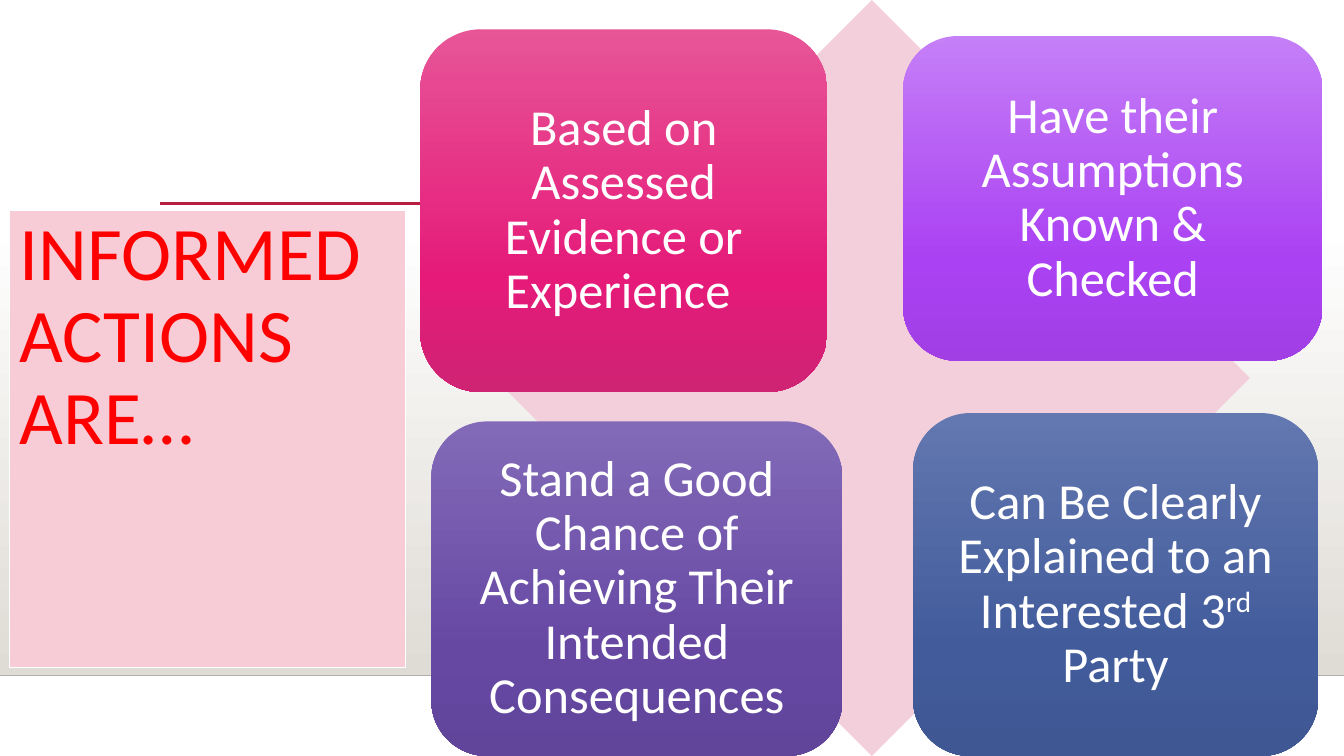
"""Build the slide on what informed actions are."""
from copy import deepcopy

from pptx import Presentation, util as u
from pptx.dml.color import RGBColor
from pptx.enum import shapes, text
from pptx.oxml import ns
from pptx.oxml.xmlchemy import OxmlElement


def paint(color_format, value):
    color_format.rgb = RGBColor.from_string(value)


def add_block(kind, box, colors, content=(), style=None):
    shape = slide.shapes.add_shape(kind, *map(u.Cm, box))
    shape.shadow.inherit = False
    shape.line.fill.background()
    if len(colors) == 1:
        shape.fill.solid()
        paint(shape.fill.fore_color, colors[0])
    else:
        shape.fill.gradient()
        shape.fill.gradient_angle = 270
        stop_list = shape._element.spPr.find(".//" + ns.qn("a:gsLst"))
        for extra in range(len(colors) - 2):
            stop_list.append(deepcopy(stop_list[0]))
        positions = (0, 0.69, 1) if len(colors) == 3 else (0, 1)
        for stop, position, color in zip(shape.fill.gradient_stops, positions, colors):
            stop.position = position
            paint(stop.color, color)
    if content:
        for name, value in style["frame"].items():
            setattr(shape.text_frame, name, value)
        paragraph = shape.text_frame.paragraphs[0]
        paragraph.alignment = style["alignment"]
        paragraph.line_spacing = 0.9
        for words, baseline in content:
            run = paragraph.add_run()
            run.text = words
            run.font.name = "Calibri"
            run.font.size = u.Pt(style["size"])
            paint(run.font.color, style["color"])
            if baseline:
                run.font._element.set("baseline", str(baseline))
    return shape


presentation = Presentation()
presentation.slide_width = u.Cm(33.87)
presentation.slide_height = u.Cm(19.05)
slide = presentation.slides.add_slide(presentation.slide_layouts[6])
shape_kind = shapes.MSO_SHAPE

add_block(shape_kind.RECTANGLE, (0, 5.61, 33.87, 11.41), ("FFFFFF", "DFDBD5"))

for left, right, top, color, width in (
    (0, 33.87, 17.02, "B2AFAA", 1),
    (4.04, 30.73, 5.13, "B71E42", 2.5),
):
    rule = slide.shapes.add_connector(
        shapes.MSO_CONNECTOR.STRAIGHT, u.Cm(left), u.Cm(top), u.Cm(right), u.Cm(top)
    )
    rule._element.spPr.append(OxmlElement("a:effectLst"))
    paint(rule.line.color, color)
    rule.line.width = u.Pt(width)

title_style = {
    "frame": {"word_wrap": True, "vertical_anchor": text.MSO_ANCHOR.TOP},
    "alignment": text.PP_ALIGN.LEFT,
    "size": 54,
    "color": "FF0000",
}
title = add_block(
    shape_kind.RECTANGLE, (0.25, 5.31, 9.98, 11.51), ("F7CCD6",),
    [("INFORMED ACTIONS ARE…", 0)], title_style,
)
paint(title.line.color, "FFFFFF")
title.line.width = u.Pt(0.75)

add_block(shape_kind.DIAMOND, (12.45, 0, 19.05, 19.05), ("F2CFDB",))

tile_frame = {"word_wrap": True, "vertical_anchor": text.MSO_ANCHOR.MIDDLE}
for side in ("left", "right", "top", "bottom"):
    tile_frame["margin_" + side] = u.Cm(0.38)
tile_style = {
    "frame": tile_frame,
    "alignment": text.PP_ALIGN.CENTER,
    "size": 36,
    "color": "FFFFFF",
}
tiles = (
    ((10.59, 0.74, 10.26, 9.14), ("E75597", "E51A79", "CF2374"),
     [("Based on Assessed Evidence or Experience ", 0)]),
    ((22.76, 0.91, 10.57, 8.18), ("C57FF7", "AA41F3", "A13FE5"),
     [("Have their Assumptions Known & Checked", 0)]),
    ((10.87, 10.62, 10.36, 8.43), ("836AB8", "6648A3", "60459A"),
     [("Stand a Good Chance of Achieving Their Intended Consequences", 0)]),
    ((23.01, 10.41, 10.21, 8.64), ("6378B0", "425B9B", "3F5793"),
     [("Can Be Clearly Explained to an Interested 3", 0), ("rd", 30000), (" Party", 0)]),
)
for box, colors, content in tiles:
    add_block(shape_kind.ROUNDED_RECTANGLE, box, colors, content, tile_style)

presentation.save("out.pptx")
